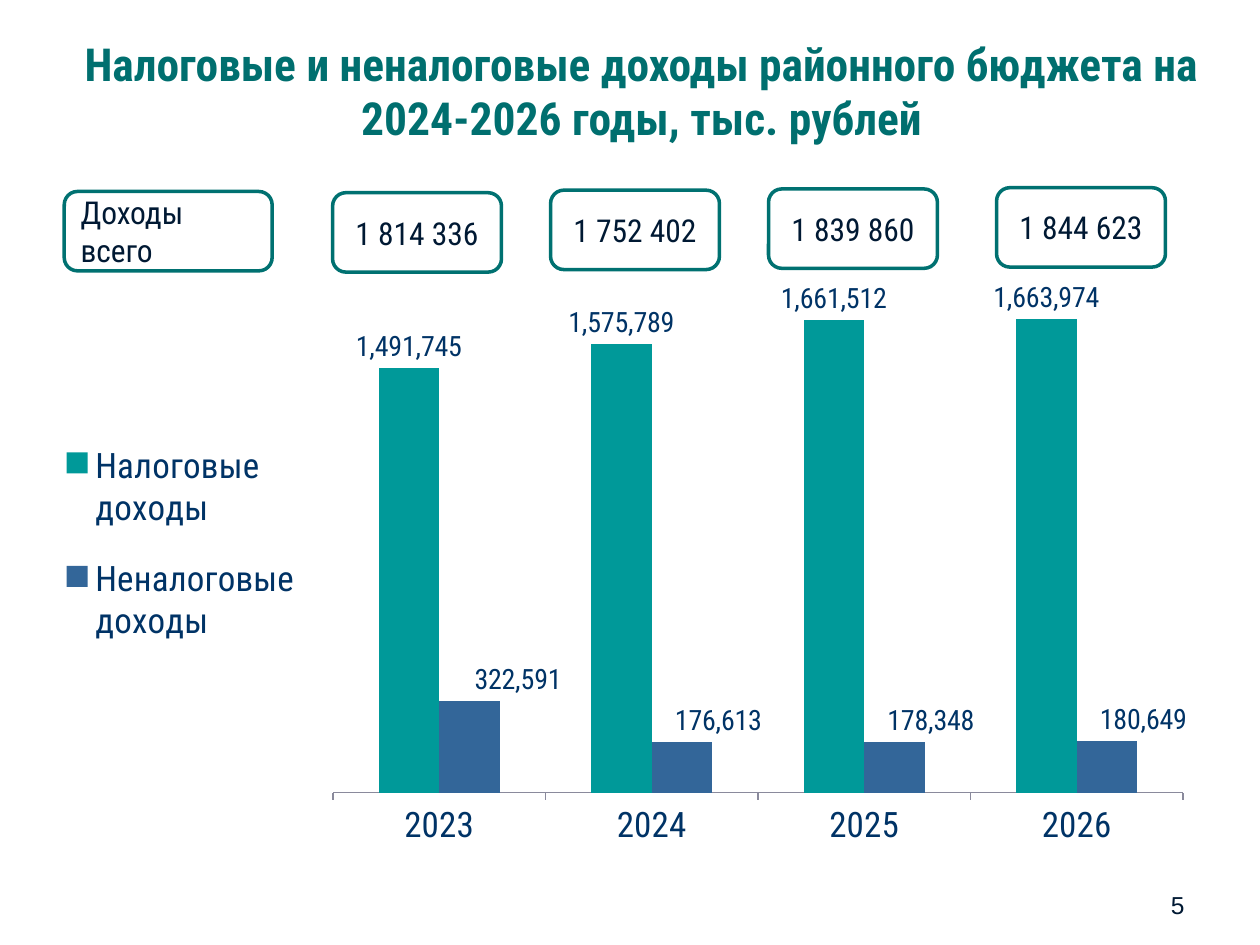
"""Build the slide on tax and non-tax revenues of the district budget."""
from lxml import etree
from pptx import Presentation, util as u
from pptx.chart.data import CategoryChartData
from pptx.dml.color import RGBColor
from pptx.enum import chart as ch, shapes, text
from pptx.oxml import ns

TITLE = "Налоговые и неналоговые доходы районного бюджета на 2024-2026 годы, тыс. рублей"
YEARS = ["2023", "2024", "2025", "2026"]
REVENUES = [
    ("Налоговые доходы", "009999", [1491745, 1575789, 1661512, 1663974]),
    ("Неналоговые доходы", "336699", [322591, 176613, 178348, 180649]),
]
NON_TAX_LABEL_SHIFTS = [0.04, 0.03, 0.03, 0.03]
TOTALS = [
    ("Доходы всего", 0.51, 1.52, 1.65, "LEFT"),
    ("1 814 336", 2.64, 1.53, 1.34, "CENTER"),
    ("1 752 402", 4.37, 1.51, 1.34, "CENTER"),
    ("1 839 860", 6.1, 1.5, 1.34, "CENTER"),
    ("1 844 623", 7.91, 1.49, 1.34, "CENTER"),
]
CONDENSED = "Roboto Condensed"
INK, NAVY, TEAL, AXIS = "001933", "003366", "007171", "8A8A9C"


def color(hex_string):
    return RGBColor.from_string(hex_string)


def style(font, size, ink, face=CONDENSED, bold=False):
    font.size, font.name, font.bold = u.Pt(size), face, bold
    font.color.rgb = color(ink)


def write(shape, words, size=18, ink=INK, face=CONDENSED, bold=False,
          align="LEFT", anchor="MIDDLE"):
    frame = shape.text_frame
    frame.word_wrap = True
    frame.auto_size = text.MSO_AUTO_SIZE.NONE
    frame.vertical_anchor = getattr(text.MSO_ANCHOR, anchor)
    paragraph = frame.paragraphs[0]
    paragraph.alignment = getattr(text.PP_ALIGN, align)
    run = paragraph.add_run()
    run.text = words
    style(run.font, size, ink, face, bold)


def set_layout(parent, index, **settings):
    for old in parent.findall(ns.qn("c:layout")):
        parent.remove(old)
    layout = etree.Element(ns.qn("c:layout"))
    manual = etree.SubElement(layout, ns.qn("c:manualLayout"))
    for tag, value in settings.items():
        etree.SubElement(manual, ns.qn("c:" + tag)).set("val", str(value))
    parent.insert(index, layout)


def add_revenue_chart(slide):
    data = CategoryChartData(number_format="#,##0")
    data.categories = YEARS
    for name, _, values in REVENUES:
        data.add_series(name, values)
    chart = slide.shapes.add_chart(
        ch.XL_CHART_TYPE.COLUMN_CLUSTERED, u.Inches(0.28), u.Inches(2.02),
        u.Inches(9.61), u.Inches(4.74), data).chart
    style(chart.font, 18, NAVY, "Arial")
    chart.has_title = False

    chart.has_legend = True
    legend = chart.legend
    legend.position = ch.XL_LEGEND_POSITION.RIGHT
    legend.include_in_layout = False
    style(legend.font, 20, NAVY)
    set_layout(legend._element, 1, xMode="edge", yMode="edge",
               x=0.01, y=0.27, w=0.22, h=0.43)
    set_layout(chart._chartSpace.chart.plotArea, 0, layoutTarget="inner",
               xMode="edge", yMode="edge", x=0.246, y=0.043, w=0.702, h=0.858)

    years, amounts = chart.category_axis, chart.value_axis
    style(years.tick_labels.font, 20, NAVY)
    years.major_tick_mark = ch.XL_TICK_MARK.OUTSIDE
    years.format.line.color.rgb = color(AXIS)
    amounts.visible = amounts.has_major_gridlines = False
    amounts.minimum_scale, amounts.maximum_scale = 0, 1800000

    plot = chart.plots[0]
    plot.gap_width, plot.overlap, plot.vary_by_categories = 150, 0, False
    for series, (_, fill, _) in zip(plot.series, REVENUES):
        series.format.fill.solid()
        series.format.fill.fore_color.rgb = color(fill)
        labels = series.data_labels
        labels.show_value = True
        labels.number_format, labels.number_format_is_linked = "#,##0", False
        labels.position = ch.XL_LABEL_POSITION.OUTSIDE_END
        style(labels.font, 16, NAVY)

    non_tax = plot.series[1]
    for index, shift in enumerate(NON_TAX_LABEL_SHIFTS):
        label = non_tax.points[index].data_label
        label.position = ch.XL_LABEL_POSITION.OUTSIDE_END
        style(label.font, 16, NAVY)
    for label, shift in zip(non_tax._element.iter(ns.qn("c:dLbl")), NON_TAX_LABEL_SHIFTS):
        set_layout(label, 1, x=shift, y=0)


def add_total(slide, words, left, top, width, align):
    box = slide.shapes.add_shape(
        shapes.MSO_SHAPE.ROUNDED_RECTANGLE, u.Inches(left), u.Inches(top),
        u.Inches(width), u.Inches(0.63))
    box.shadow.inherit = False
    box.fill.solid()
    box.fill.fore_color.rgb = color("FFFFFF")
    box.line.color.rgb = color(TEAL)
    box.line.width = u.Pt(2)
    write(box, words, align=align)


def main():
    deck = Presentation()
    deck.slide_width, deck.slide_height = u.Inches(10), u.Inches(7.5)
    slide = deck.slides.add_slide(deck.slide_layouts[5])
    title = slide.shapes.title
    title.left, title.top = u.Inches(0.35), u.Inches(0.28)
    title.width, title.height = u.Inches(9.49), u.Inches(0.87)
    write(title, TITLE, size=26, ink="006F6F", bold=True, align="CENTER")
    add_revenue_chart(slide)
    page_number = slide.shapes.add_textbox(
        u.Inches(7.17), u.Inches(6.83), u.Inches(2.33), u.Inches(0.52))
    write(page_number, "5", size=14, face="Arial", align="RIGHT", anchor="BOTTOM")
    for total in TOTALS:
        add_total(slide, *total)
    deck.save("out.pptx")


if __name__ == "__main__":
    main()
